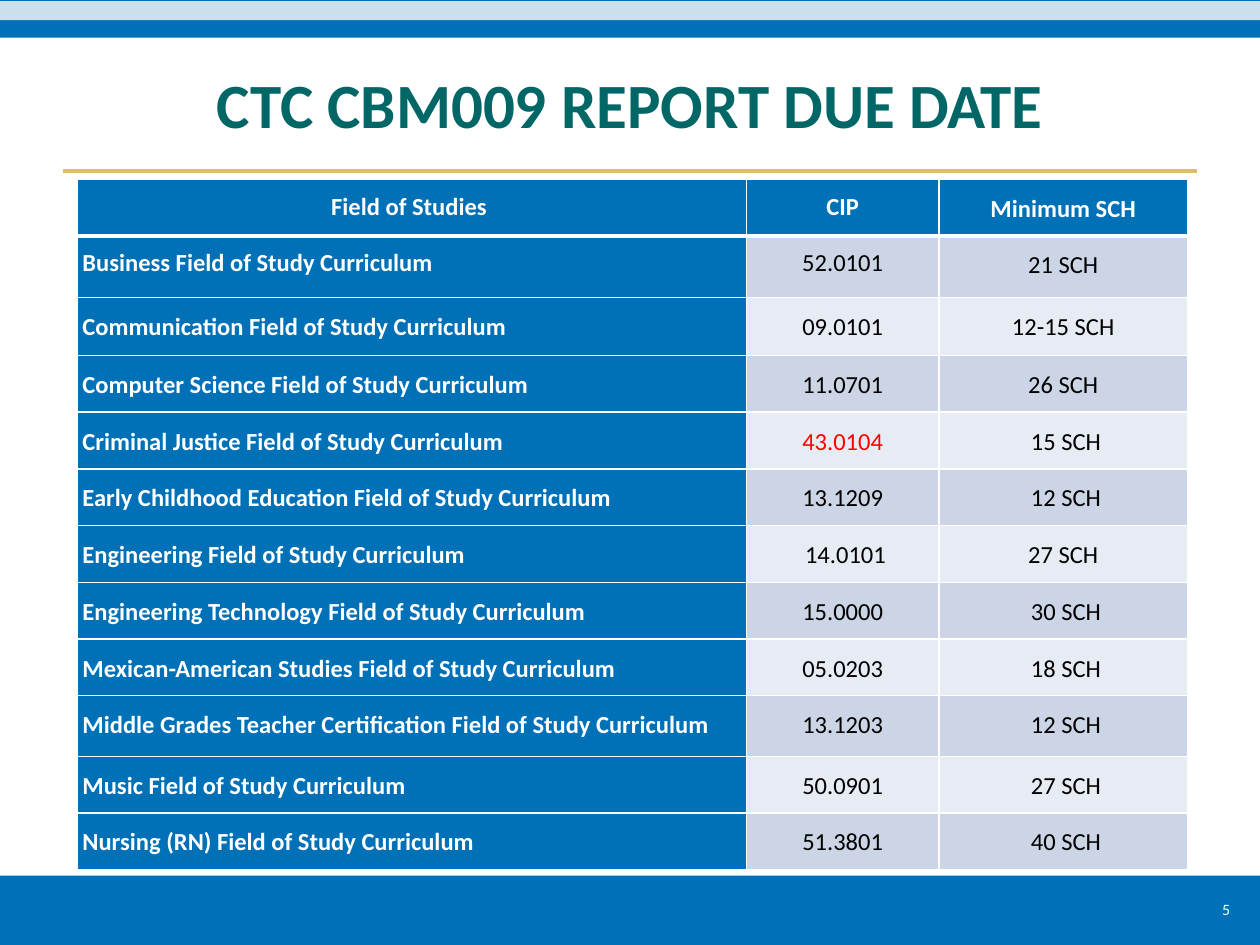
from typing import NamedTuple

from lxml.etree import SubElement
from pptx import Presentation
from pptx.dml.color import RGBColor
from pptx.enum.shapes import MSO_CONNECTOR as Connector, MSO_SHAPE as Shape
from pptx.enum.text import MSO_ANCHOR as Anchor, PP_ALIGN as Align
from pptx.oxml.ns import qn
from pptx.util import Pt

FONT = "Calibri"
WHITE, BLACK, RED = "FFFFFF", "000000", "FF0000"
BAND_BLUE, PALE_BLUE, TABLE_BLUE = "0071B8", "CCDFEC", "0070B7"
GOLD, TEAL = "E0BE62", "006666"
ROW_FILLS = ("CCD5E6", "E7EBF3")

SLIDE_WIDTH, SLIDE_HEIGHT = 720, 540
TABLE_LEFT, TABLE_TOP = 44.2, 102.4
COLUMN_WIDTHS = (382.3, 110.2, 141.8)
ROW_HEIGHT = 31.7
LINE_SPACING, SPACE_BEFORE = 1.07, 2.9
HEADINGS = ("Field of Studies ", "CIP", "Minimum SCH")


class Box(NamedTuple):
    left: float
    top: float
    width: float
    height: float


class Study(NamedTuple):
    field: str
    cip: str
    hours: str
    height: float = ROW_HEIGHT
    cip_color: str = BLACK


STUDIES = (
    Study("Business", " 52.0101 ", "21 SCH", height=35.3),
    Study("Communication", "09.0101", "12-15 SCH", height=33.1),
    Study("Computer Science", "11.0701", "26 SCH"),
    Study("Criminal Justice", "43.0104", " 15 SCH", cip_color=RED),
    Study("Early Childhood Education", "13.1209", " 12 SCH"),
    Study("Engineering", " 14.0101", "27 SCH"),
    Study("Engineering Technology", "15.0000", " 30 SCH"),
    Study("Mexican-American Studies", "05.0203", " 18 SCH"),
    Study("Middle Grades Teacher Certification", "13.1203", " 12 SCH", height=34.6),
    Study("Music", "50.0901", " 27 SCH"),
    Study("Nursing (RN)", "51.3801", " 40 SCH"),
)


def rgb(color: str) -> RGBColor:
    return RGBColor.from_string(color)


def style_paragraph(paragraph, size: float, color: str, align: Align, bold: bool = False) -> None:
    paragraph.alignment = align
    font = paragraph.font
    font.name, font.size, font.bold = FONT, Pt(size), bold
    font.color.rgb = rgb(color)


def add_band(slide, box: Box, color: str) -> None:
    band = slide.shapes.add_shape(Shape.RECTANGLE, *map(Pt, box))
    band.shadow.inherit = False
    band.fill.solid()
    band.fill.fore_color.rgb = rgb(color)
    band.line.fill.background()


def add_rule(slide, left: float, right: float, y: float) -> None:
    rule = slide.shapes.add_connector(Connector.STRAIGHT, Pt(left), Pt(y), Pt(right), Pt(y))
    rule.line.color.rgb = rgb(GOLD)
    rule.line.width = Pt(2.25)
    SubElement(rule._element.spPr, qn("a:effectLst"))


def add_text(slide, box: Box, text: str, size: float, color: str, align: Align,
             anchor: Anchor, bold: bool = False, side_inset: float = 0) -> None:
    frame = slide.shapes.add_textbox(*map(Pt, box)).text_frame
    frame.word_wrap = True
    frame.vertical_anchor = anchor
    frame.margin_left = frame.margin_right = Pt(side_inset)
    frame.margin_top = frame.margin_bottom = Pt(3.6)
    paragraph = frame.paragraphs[0]
    paragraph.text = text
    style_paragraph(paragraph, size, color, align, bold)


def set_borders(cell, top: float = 1, bottom: float = 1) -> None:
    """Draw white cell borders; must run before the cell's fill is set."""
    properties = cell._tc.get_or_add_tcPr()
    for side, width in (("L", 1), ("R", 1), ("T", top), ("B", bottom)):
        line = SubElement(properties, qn(f"a:ln{side}"), w=str(Pt(width)))
        fill = SubElement(line, qn("a:solidFill"))
        SubElement(fill, qn("a:srgbClr"), val=WHITE)


def fill_cell(cell, text: str, fill: str, color: str, align: Align, bold: bool,
              spaced_before: bool) -> None:
    cell.fill.solid()
    cell.fill.fore_color.rgb = rgb(fill)
    cell.margin_left = cell.margin_right = Pt(2.9)
    cell.margin_top = cell.margin_bottom = Pt(7.2)
    paragraph = cell.text_frame.paragraphs[0]
    paragraph.text = text
    style_paragraph(paragraph, 14, color, align, bold)
    if spaced_before:
        paragraph.space_before = Pt(SPACE_BEFORE)
    else:
        paragraph.line_spacing = LINE_SPACING


def add_studies_table(slide) -> None:
    heights = [ROW_HEIGHT] + [study.height for study in STUDIES]
    box = Box(TABLE_LEFT, TABLE_TOP, sum(COLUMN_WIDTHS), sum(heights))
    table = slide.shapes.add_table(len(heights), len(COLUMN_WIDTHS), *map(Pt, box)).table
    for column, width in zip(table.columns, COLUMN_WIDTHS):
        column.width = Pt(width)
    for row, height in zip(table.rows, heights):
        row.height = Pt(height)

    for index, heading in enumerate(HEADINGS):
        cell = table.cell(0, index)
        set_borders(cell, bottom=3)
        fill_cell(cell, heading, TABLE_BLUE, WHITE, Align.CENTER, True, index < 2)

    for number, study in enumerate(STUDIES, start=1):
        band = ROW_FILLS[(number - 1) % 2]
        entries = (
            (f"{study.field} Field of Study Curriculum", TABLE_BLUE, WHITE, Align.LEFT, True),
            (study.cip, band, study.cip_color, Align.CENTER, False),
            (study.hours, band, BLACK, Align.CENTER, False),
        )
        for index, entry in enumerate(entries):
            cell = table.cell(number, index)
            set_borders(cell, top=3 if number == 1 else 1)
            fill_cell(cell, *entry, spaced_before=number == 1 and index < 2)


def main() -> None:
    presentation = Presentation()
    presentation.slide_width, presentation.slide_height = Pt(SLIDE_WIDTH), Pt(SLIDE_HEIGHT)
    slide = presentation.slides.add_slide(presentation.slide_layouts[6])

    add_band(slide, Box(0, 500.4, SLIDE_WIDTH, 39.6), BAND_BLUE)
    add_band(slide, Box(0, 0, SLIDE_WIDTH, 21.6), BAND_BLUE)
    add_band(slide, Box(0, 0.7, SLIDE_WIDTH, 10.8), PALE_BLUE)
    add_rule(slide, 36, 684, 97.9)
    add_text(slide, Box(36, 21.6, 648, 62.6), "CTC CBM009 REPORT DUE DATE", 36, TEAL,
             Align.CENTER, Anchor.BOTTOM, bold=True)
    add_text(slide, Box(634.3, 510.5, 75.6, 18.7), "5", 9, WHITE,
             Align.RIGHT, Anchor.MIDDLE, side_inset=7.2)
    add_studies_table(slide)
    presentation.save("out.pptx")


if __name__ == "__main__":
    main()
